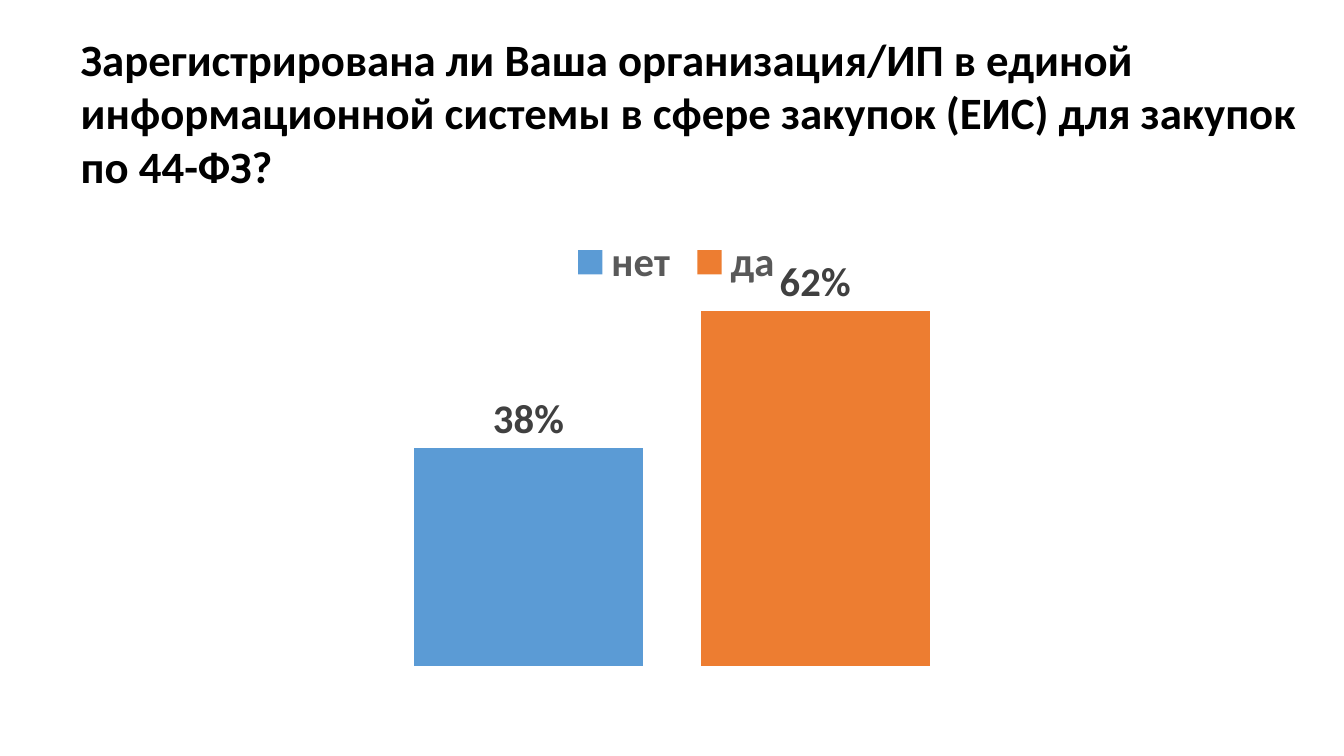
import pptx
import pptx.util
import pptx.chart.data
import pptx.dml.color
import pptx.enum.chart
import pptx.enum.text
import pptx.oxml


def color(hex_string):
    return pptx.dml.color.RGBColor.from_string(hex_string)


def manual_layout(x, y, width, height, target=""):
    return pptx.oxml.parse_xml(
        '<c:layout xmlns:c="http://schemas.openxmlformats.org/drawingml/2006/chart"><c:manualLayout>'
        f'{target}<c:xMode val="edge"/><c:yMode val="edge"/>'
        f'<c:x val="{x}"/><c:y val="{y}"/><c:w val="{width}"/><c:h val="{height}"/>'
        '</c:manualLayout></c:layout>')


presentation = pptx.Presentation()
presentation.slide_width = pptx.util.Inches(13.33)
presentation.slide_height = pptx.util.Inches(7.5)
slide = presentation.slides.add_slide(presentation.slide_layouts[5])

title = slide.shapes.title
title.left, title.top, title.width, title.height = map(pptx.util.Inches, (0.7, 0.26, 12.63, 1.72))
title.text_frame.word_wrap = True
title.text_frame.auto_size = pptx.enum.text.MSO_AUTO_SIZE.NONE
title.text_frame.vertical_anchor = pptx.enum.text.MSO_ANCHOR.TOP
paragraph = title.text_frame.paragraphs[0]
paragraph.alignment = pptx.enum.text.PP_ALIGN.LEFT
run = paragraph.add_run()
run.text = ("Зарегистрирована ли Ваша организация/ИП в единой информационной системы "
            "в сфере закупок (ЕИС) для закупок по 44-ФЗ?")
title_font = run.font

answers = [("нет", 0.38, "5B9BD5"), ("да", 0.62, "ED7D31")]
chart_data = pptx.chart.data.CategoryChartData(number_format="0%")
chart_data.categories = ["1"]
for name, share, fill in answers:
    chart_data.add_series(name, [share])

chart = slide.shapes.add_chart(
    pptx.enum.chart.XL_CHART_TYPE.COLUMN_CLUSTERED,
    *map(pptx.util.Inches, (2.22, 1.79, 8.89, 4.92)), chart_data).chart
chart.has_title = False
chart.category_axis.visible = False
chart.value_axis.visible = False
chart.value_axis.has_major_gridlines = False
chart.value_axis.minimum_scale = 0
chart.value_axis.maximum_scale = 0.7

plot = chart.plots[0]
plot.vary_by_categories = False
plot.gap_width = 150
plot.overlap = -25
chart.has_legend = True
legend = chart.legend
legend.position = pptx.enum.chart.XL_LEGEND_POSITION.TOP
legend.include_in_layout = False

fonts = [(title_font, 32, "000000"), (chart.font, 29, "000000"), (legend.font, 29, "595959")]
for series, (name, share, fill) in zip(plot.series, answers):
    series.format.fill.solid()
    series.format.fill.fore_color.rgb = color(fill)
    labels = series.data_labels
    labels.show_value = True
    labels.number_format = "0%"
    labels.number_format_is_linked = False
    labels.position = pptx.enum.chart.XL_LABEL_POSITION.OUTSIDE_END
    fonts.append((labels.font, 29, "404040"))

for font, size, ink in fonts:
    font.name = "Calibri"
    font.size = pptx.util.Pt(size)
    font.bold = True
    font.color.rgb = color(ink)

plot_area = chart.element.find(".//{*}plotArea")
for layout in plot_area.findall("{*}layout"):
    plot_area.remove(layout)
plot_area.insert(0, manual_layout(0.02, 0.17, 0.96, 0.81, '<c:layoutTarget val="inner"/>'))
legend_element = chart.element.find(".//{*}legend")
for layout in legend_element.findall("{*}layout"):
    legend_element.remove(layout)
legend_element.find("{*}legendPos").addnext(manual_layout(0.38, 0.11, 0.25, 0.11))

presentation.save("out.pptx")
